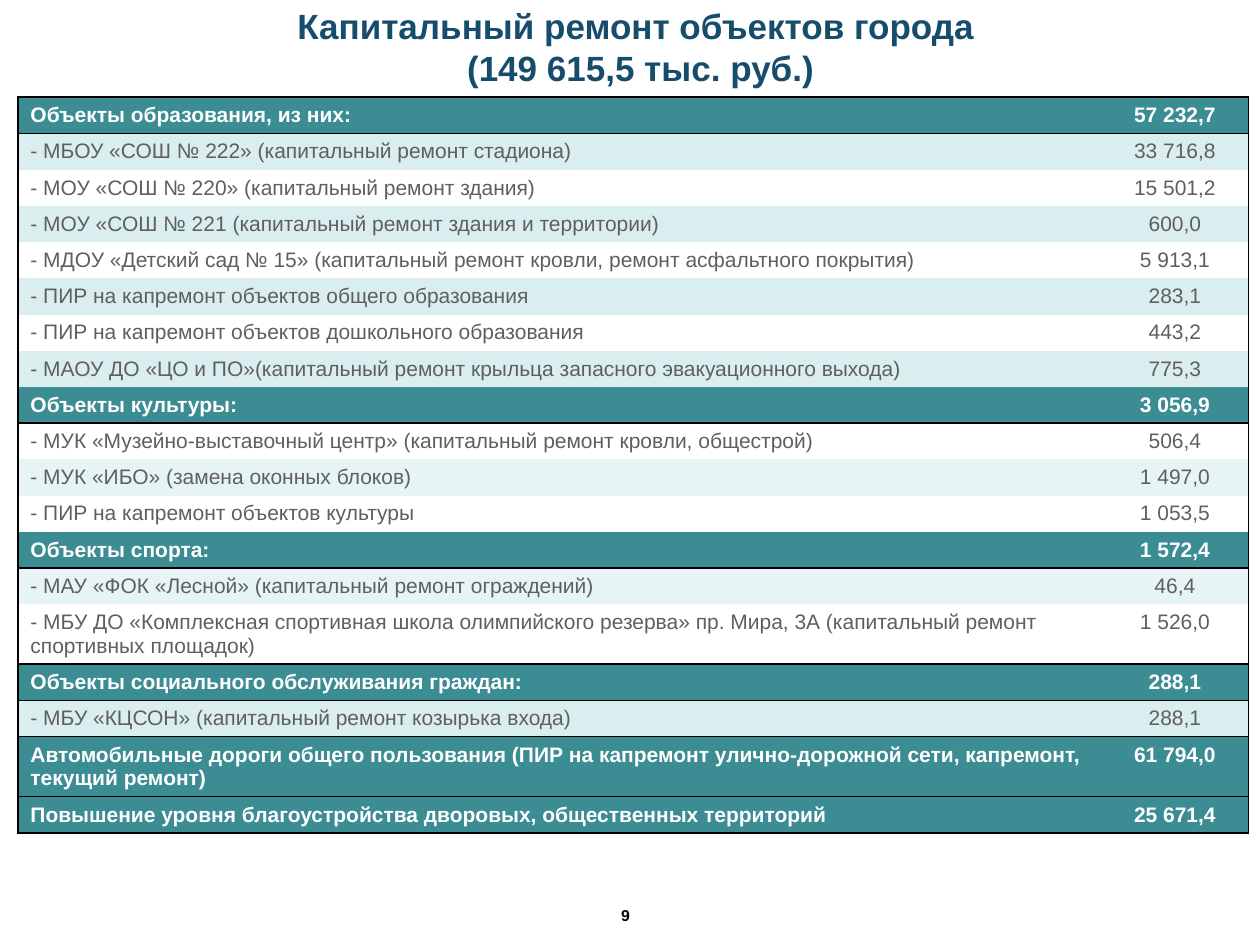
from lxml.etree import SubElement
from pptx import Presentation
from pptx.dml.color import RGBColor
from pptx.enum.text import MSO_ANCHOR, MSO_AUTO_SIZE, PP_ALIGN
from pptx.oxml.ns import qn
from pptx.util import Cm, Pt

NAVY = RGBColor(0x16, 0x4C, 0x6C)
TEAL = RGBColor(0x3C, 0x8C, 0x93)
PALE = RGBColor(0xDA, 0xED, 0xEF)
MINT = RGBColor(0xE6, 0xF4, 0xF5)
WHITE = RGBColor(0xFF, 0xFF, 0xFF)
GRAY = RGBColor(0x5F, 0x5F, 0x5F)
BLACK = RGBColor(0, 0, 0)
PLAIN_TABLE_STYLE = "{2D5ABB26-0587-4C30-8999-92F81FD0307C}"

TITLE = "Капитальный ремонт объектов города \v(149 615,5 тыс. руб.)"
PAGE_NUMBER = "9"

SECTIONS = [
    {"name": "Объекты образования, из них:", "total": "57 232,7",
     "edges": "LRTB", "bands": (PALE, WHITE), "items": [
         ("- МБОУ «СОШ № 222» (капитальный ремонт стадиона)", "33 716,8"),
         ("- МОУ «СОШ № 220» (капитальный ремонт здания)", "15 501,2"),
         ("- МОУ «СОШ № 221 (капитальный ремонт здания и территории)", "600,0"),
         ("- МДОУ «Детский сад № 15» (капитальный ремонт кровли, ремонт асфальтного покрытия)", "5 913,1"),
         ("- ПИР на капремонт объектов общего образования", "283,1"),
         ("- ПИР на капремонт объектов дошкольного образования", "443,2"),
         ("- МАОУ ДО «ЦО и ПО»(капитальный ремонт крыльца запасного эвакуационного выхода)", "775,3"),
     ]},
    {"name": "Объекты культуры:", "total": "3 056,9",
     "edges": "LRB", "bands": (WHITE, MINT), "items": [
         ("- МУК «Музейно-выставочный центр» (капитальный ремонт кровли, общестрой)", "506,4"),
         ("- МУК «ИБО» (замена оконных блоков)", "1 497,0"),
         ("- ПИР на капремонт объектов культуры", "1 053,5"),
     ]},
    {"name": "Объекты спорта:", "total": "1 572,4",
     "edges": "LRB", "bands": (MINT, WHITE), "items": [
         ("- МАУ «ФОК «Лесной» (капитальный ремонт ограждений)", "46,4"),
         ("- МБУ ДО «Комплексная спортивная школа олимпийского резерва» пр. Мира, 3А "
          "(капитальный ремонт спортивных площадок)", "1 526,0"),
     ]},
    {"name": "Объекты социального обслуживания граждан:", "total": "288,1",
     "edges": "LRTB", "bands": (PALE, WHITE), "items": [
         ("- МБУ «КЦСОН» (капитальный ремонт козырька входа)", "288,1"),
     ]},
    {"name": "Автомобильные дороги общего пользования (ПИР на капремонт улично-дорожной сети, "
             "капремонт, текущий ремонт)", "total": "61 794,0",
     "edges": "LRTB", "bands": (PALE, WHITE), "items": []},
    {"name": "Повышение уровня благоустройства дворовых, общественных территорий",
     "total": "25 671,4", "edges": "LRTB", "bands": (PALE, WHITE), "items": []},
]

COLUMN_WIDTHS = (Cm(21.84), Cm(2.97))
ROW_HEIGHT = Cm(0.73)
TALL_ROW_HEIGHT = Cm(1.21)
LINE_CAPACITY = 90


def write(frame, text, size=12, color=GRAY, bold=False, align=PP_ALIGN.LEFT):
    frame.text = text
    paragraph = frame.paragraphs[0]
    paragraph.alignment = align
    for run in paragraph.runs:
        run.font.name = "Arial"
        run.font.size = Pt(size)
        run.font.bold = bold
        run.font.color.rgb = color


def add_borders(cell, edges):
    properties = cell._tc.get_or_add_tcPr()
    for edge in edges:
        line = SubElement(properties, qn(f"a:ln{edge}"), w=str(Pt(1)))
        fill = SubElement(line, qn("a:solidFill"))
        SubElement(fill, qn("a:srgbClr"), val=str(BLACK))


def table_rows():
    for section in SECTIONS:
        yield section["name"], section["total"], TEAL, WHITE, True, section["edges"]
        for index, (name, amount) in enumerate(section["items"]):
            yield name, amount, section["bands"][index % 2], GRAY, False, "LR"


def add_repair_table(slide):
    rows = list(table_rows())
    frame = slide.shapes.add_table(len(rows), 2, Cm(0.36), Cm(1.96),
                                   sum(COLUMN_WIDTHS), ROW_HEIGHT * len(rows))
    table = frame.table
    table.first_row = False
    table.horz_banding = False
    table._tbl.tblPr.find(qn("a:tableStyleId")).text = PLAIN_TABLE_STYLE
    for column, width in zip(table.columns, COLUMN_WIDTHS):
        column.width = width
    for row, (name, amount, fill, color, bold, edges) in zip(table.rows, rows):
        row.height = TALL_ROW_HEIGHT if len(name) > LINE_CAPACITY else ROW_HEIGHT
        contents = ((name, PP_ALIGN.LEFT, "R"), (amount, PP_ALIGN.CENTER, "L"))
        for cell, (text, align, inner_edge) in zip(row.cells, contents):
            add_borders(cell, edges.replace(inner_edge, ""))
            cell.fill.solid()
            cell.fill.fore_color.rgb = fill
            write(cell.text_frame, text, color=color, bold=bold, align=align)


def main():
    presentation = Presentation()
    presentation.slide_width = Cm(25.4)
    presentation.slide_height = Cm(19.05)
    slide = presentation.slides.add_slide(presentation.slide_layouts[5])

    title = slide.shapes.title
    title.left, title.top, title.width, title.height = Cm(0.43), Cm(0.53), Cm(24.97), Cm(0.8)
    title.text_frame.auto_size = MSO_AUTO_SIZE.NONE
    title.text_frame.vertical_anchor = MSO_ANCHOR.MIDDLE
    write(title.text_frame, TITLE, size=20, color=NAVY, bold=True, align=PP_ALIGN.CENTER)

    add_repair_table(slide)

    page_box = slide.shapes.add_textbox(Cm(11.91), Cm(18.14), Cm(1.4), Cm(0.64))
    page_box.text_frame.word_wrap = True
    page_box.text_frame.vertical_anchor = MSO_ANCHOR.MIDDLE
    write(page_box.text_frame, PAGE_NUMBER, size=9, color=BLACK, bold=True, align=PP_ALIGN.CENTER)

    presentation.save("out.pptx")


if __name__ == "__main__":
    main()
